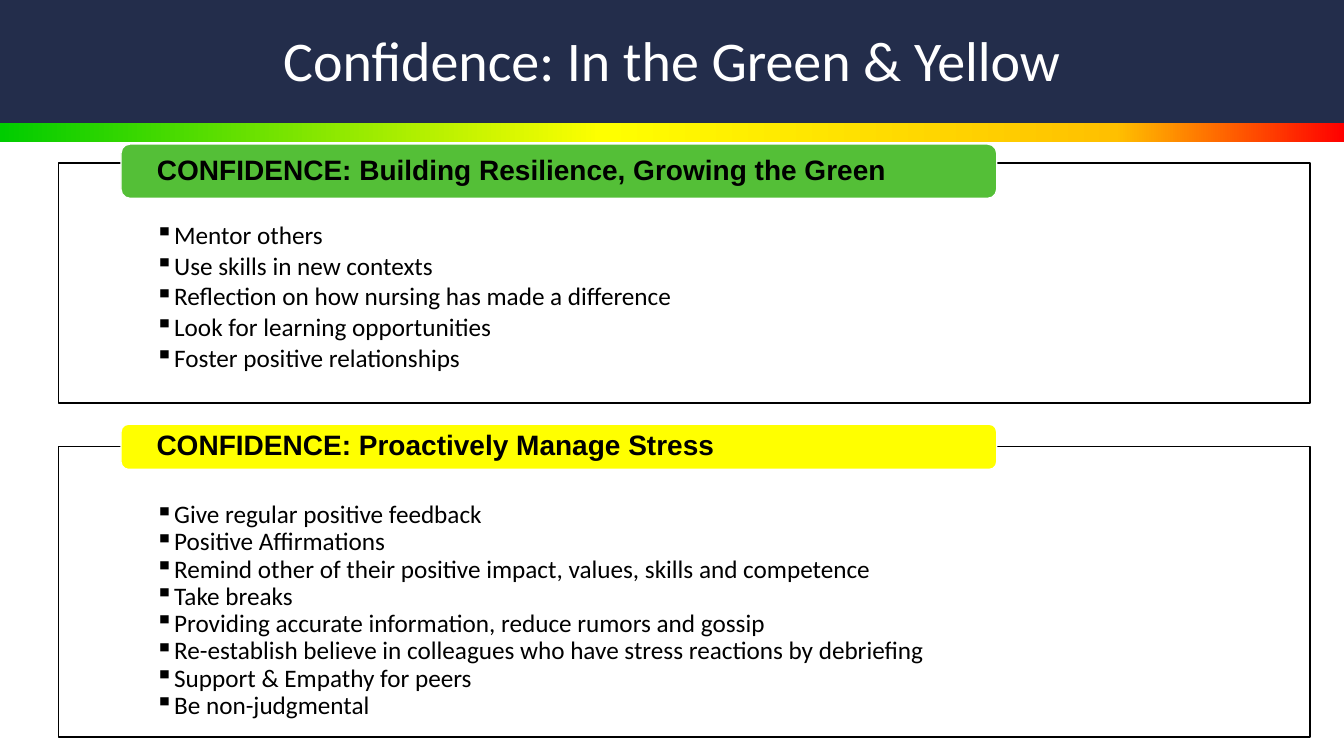
from dataclasses import dataclass

from lxml import etree
from pptx import Presentation
from pptx.dml.color import RGBColor
from pptx.enum.shapes import MSO_SHAPE
from pptx.enum.text import MSO_ANCHOR, PP_ALIGN
from pptx.oxml.ns import qn
from pptx.util import Cm, Pt

RECT, ROUNDED = MSO_SHAPE.RECTANGLE, MSO_SHAPE.ROUNDED_RECTANGLE
TOP, MIDDLE = MSO_ANCHOR.TOP, MSO_ANCHOR.MIDDLE
LEFT, CENTER = PP_ALIGN.LEFT, PP_ALIGN.CENTER


@dataclass(frozen=True)
class Theme:
    navy: str = "232D4B"
    white: str = "FFFFFF"
    black: str = "000000"
    green: str = "54BF37"
    yellow: str = "FFFF00"
    spectrum: tuple = ((0, "00CC00"), (45, "FFFF00"), (83, "FFC000"), (100, "FF0000"))
    title_size: int = 40
    label_size: int = 20
    bullet_size: int = 18
    body_font: str = "Calibri"
    label_font: str = "Arial"
    line_spacing: float = 0.9
    frame_opacity: int = 90


THEME = Theme()
SLIDE_WIDTH, SLIDE_HEIGHT = Cm(33.87), Cm(19.05)
BANNER_HEIGHT = Cm(3.1)
BULLET_INDENT = Cm(0.48)

SECTIONS = (
    {
        "heading": "CONFIDENCE: Building Resilience, Growing the Green",
        "color": THEME.green,
        "label_span": (Cm(3.63), Cm(1.37)),
        "frame_span": (Cm(4.11), Cm(6.05)),
        "text_top": Cm(1.5),
        "space_after": Pt(2.5),
        "points": (
            "Mentor others",
            "Use skills in new contexts",
            "Reflection on how nursing has made a difference",
            "Look for learning opportunities",
            "Foster positive relationships",
        ),
    },
    {
        "heading": "CONFIDENCE: Proactively Manage Stress",
        "color": THEME.yellow,
        "label_span": (Cm(10.69), Cm(1.14)),
        "frame_span": (Cm(11.25), Cm(7.32)),
        "text_top": Cm(1.4),
        "space_after": Pt(0),
        "points": (
            "Give regular positive feedback",
            "Positive Affirmations",
            "Remind other of their positive impact, values, skills and competence",
            "Take breaks",
            "Providing accurate information, reduce rumors and gossip",
            "Re-establish believe in colleagues who have stress reactions by debriefing",
            "Support & Empathy for peers",
            "Be non-judgmental",
        ),
    },
)


def apply(target, formats):
    for name, value in formats.items():
        setattr(target, name, value)


def add_box(slide, preset, bounds, fill, line=None):
    box = slide.shapes.add_shape(preset, *bounds)
    box.shadow.inherit = False
    box.fill.solid()
    box.fill.fore_color.rgb = RGBColor.from_string(fill)
    if line:
        box.line.color.rgb = RGBColor.from_string(line)
        box.line.width = Pt(1)
    else:
        box.line.fill.background()
    return box


def set_opacity(box, percent):
    color = box.element.spPr.find(qn("a:solidFill"))[0]
    etree.SubElement(color, qn("a:alpha"), val=str(percent * 1000))


def write(box, lines, font, frame, paragraph):
    """Fill a box with one paragraph per line, all in the given formats."""
    text = box.text_frame
    apply(text, {"word_wrap": True, **frame})
    text.text = "\n".join(lines)
    for item in text.paragraphs:
        apply(item, {"line_spacing": THEME.line_spacing, **paragraph})
        run_font = item.runs[0].font
        color = font["color"]
        apply(run_font, {key: value for key, value in font.items() if key != "color"})
        run_font.color.rgb = RGBColor.from_string(color)


def add_bullets(box):
    for item in box.text_frame.paragraphs:
        properties = item._p.get_or_add_pPr()
        properties.set("marL", str(BULLET_INDENT))
        properties.set("indent", str(-BULLET_INDENT))
        etree.SubElement(properties, qn("a:buChar"), char="▪")


def add_spectrum(slide):
    strip = add_box(slide, RECT, (0, BANNER_HEIGHT, SLIDE_WIDTH, Cm(0.48)), THEME.white)
    strip.fill.gradient()
    strip.fill.gradient_angle = 0
    stops = strip.element.spPr.find(qn("a:gradFill")).find(qn("a:gsLst"))
    for stop in list(stops):
        stops.remove(stop)
    for position, color in THEME.spectrum:
        stop = etree.SubElement(stops, qn("a:gs"), pos=str(position * 1000))
        etree.SubElement(stop, qn("a:srgbClr"), val=color)


def add_title(slide, title):
    add_box(slide, RECT, (0, 0, SLIDE_WIDTH, BANNER_HEIGHT), THEME.navy)
    box = slide.shapes.add_textbox(Cm(0.23), Cm(0.2), Cm(33.4), Cm(2.79))
    write(
        box,
        [title],
        {"name": THEME.body_font, "size": Pt(THEME.title_size), "color": THEME.white},
        {"vertical_anchor": MIDDLE},
        {"alignment": CENTER},
    )


def add_frame(slide, section):
    top, height = section["frame_span"]
    frame = add_box(slide, RECT, (Cm(1.47), top, Cm(31.55), height), THEME.white, THEME.black)
    set_opacity(frame, THEME.frame_opacity)
    write(
        frame,
        section["points"],
        {"name": THEME.body_font, "size": Pt(THEME.bullet_size), "color": THEME.black},
        {
            "vertical_anchor": TOP,
            "margin_left": Cm(2.44),
            "margin_right": Cm(2.44),
            "margin_top": section["text_top"],
            "margin_bottom": Cm(0.3),
        },
        {"alignment": LEFT, "level": 1, "space_after": section["space_after"]},
    )
    add_bullets(frame)


def add_label(slide, section):
    top, height = section["label_span"]
    label = add_box(slide, ROUNDED, (Cm(3.05), top, Cm(22.07), height), section["color"], THEME.white)
    write(
        label,
        [section["heading"]],
        {"name": THEME.label_font, "size": Pt(THEME.label_size), "bold": True, "color": THEME.black},
        {
            "vertical_anchor": MIDDLE,
            "margin_left": Cm(0.84),
            "margin_right": Cm(0.84),
            "margin_top": 0,
            "margin_bottom": 0,
        },
        {"alignment": LEFT},
    )


def main():
    deck = Presentation()
    apply(deck, {"slide_width": SLIDE_WIDTH, "slide_height": SLIDE_HEIGHT})
    slide = deck.slides.add_slide(deck.slide_layouts[6])
    add_spectrum(slide)
    add_title(slide, "Confidence: In the Green & Yellow")
    for section in SECTIONS:
        add_frame(slide, section)
        add_label(slide, section)
    deck.save("out.pptx")


if __name__ == "__main__":
    main()
